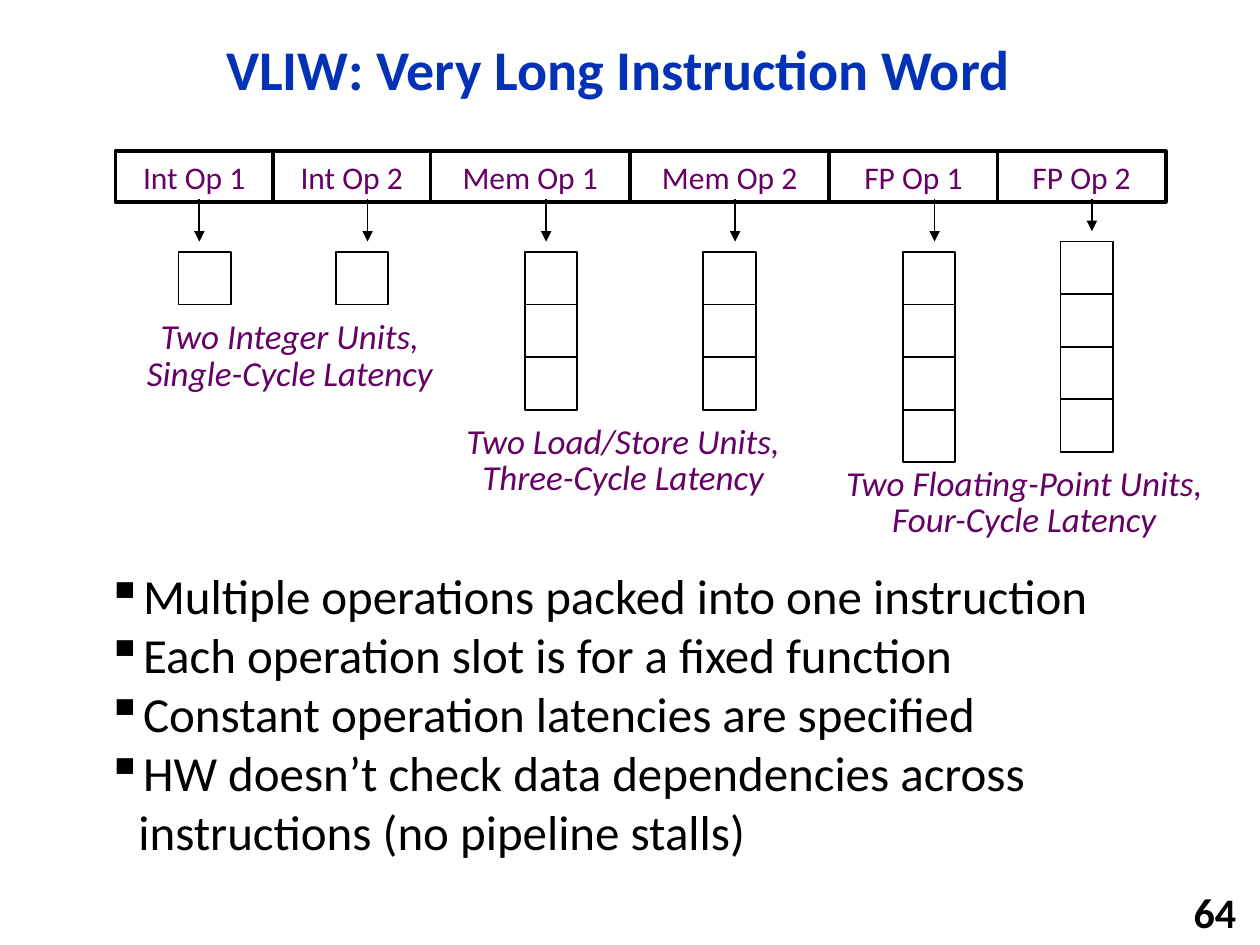
"""Build the slide on VLIW operation slots and their pipelined units."""
import dataclasses

import lxml.etree
import pptx
import pptx.dml.color
import pptx.enum.shapes
import pptx.enum.text
import pptx.oxml.ns
import pptx.util

Cm = pptx.util.Cm
Pt = pptx.util.Pt
PP_ALIGN = pptx.enum.text.PP_ALIGN
BLUE = pptx.dml.color.RGBColor(0x03, 0x32, 0xB7)
PURPLE = pptx.dml.color.RGBColor(0x66, 0x00, 0x66)
BLACK = pptx.dml.color.RGBColor(0, 0, 0)

WORD_LEFT, WORD_TOP, WORD_HEIGHT = 2.33, 3.05, 1.02
STAGE_SIZE = 1.06
ARROW_TOP, ARROW_GAP = 4.02, 0.21


@dataclasses.dataclass(frozen=True)
class Slot:
    label: str
    width: float
    arrow_x: float
    stage_left: float
    latency: int
    stage_top: float = 5.08


@dataclasses.dataclass(frozen=True)
class Caption:
    lines: tuple[str, ...]
    left: float
    top: float
    width: float


SLOTS = (
    Slot("Int Op 1", 3.17, 4.02, 3.60, 1),
    Slot("Int Op 2", 3.18, 7.41, 6.77, 1),
    Slot("Mem Op 1", 4.02, 11.01, 10.58, 3),
    Slot("Mem Op 2", 4.02, 14.82, 14.18, 3),
    Slot("FP Op 1", 3.39, 18.84, 18.20, 4),
    Slot("FP Op 2", 3.39, 22.01, 21.38, 4, 4.87),
)
CAPTIONS = (
    Caption(("Two Integer Units,", "Single-Cycle Latency"), 2.62, 6.40, 6.45),
    Caption(("Two Load/Store Units,", "Three-Cycle Latency"), 9.02, 8.51, 7.09),
    Caption(("Two Floating-Point Units,", "Four-Cycle Latency"), 16.66, 9.35, 7.98),
)
POINTS = (
    "Multiple operations packed into one instruction",
    "Each operation slot is for a fixed function",
    "Constant operation latencies are specified",
    "HW doesn’t check data dependencies across instructions (no pipeline stalls)",
)


def write(shape, *lines: str, size: float, color=BLACK, bold=False, italic=False,
          align=PP_ALIGN.CENTER, spacing=1.0, gap=0.0, wrap=True, bullet="") -> None:
    """Fill a shape with one formatted paragraph per line."""
    frame = shape.text_frame
    frame.auto_size = pptx.enum.text.MSO_AUTO_SIZE.NONE
    frame.word_wrap = wrap
    frame.vertical_anchor = pptx.enum.text.MSO_ANCHOR.MIDDLE
    frame.text = "\n".join(lines)
    for index, paragraph in enumerate(frame.paragraphs):
        paragraph.alignment = align
        paragraph.line_spacing = spacing
        paragraph.space_before = Pt(gap if index else 0)
        font = paragraph.runs[0].font
        font.name, font.size = "Calibri", Pt(size)
        font.bold, font.italic = bold, italic
        font.color.rgb = color
        if bullet:
            properties = paragraph._p.get_or_add_pPr()
            properties.set("marL", str(Cm(0.64)))
            properties.set("indent", str(Cm(-0.64)))
            mark = lxml.etree.SubElement(properties, pptx.oxml.ns.qn("a:buChar"))
            mark.set("char", bullet)


def add_text(slide, left: float, top: float, width: float, height: float,
             *lines: str, **style) -> None:
    """Add a text box."""
    box = slide.shapes.add_textbox(Cm(left), Cm(top), Cm(width), Cm(height))
    write(box, *lines, **style)


def add_box(slide, left: float, top: float, width: float, height: float, weight: float):
    """Add an outlined rectangle without fill."""
    box = slide.shapes.add_shape(pptx.enum.shapes.MSO_SHAPE.RECTANGLE,
                                 Cm(left), Cm(top), Cm(width), Cm(height))
    box.shadow.inherit = False
    box.fill.background()
    box.line.color.rgb = BLACK
    box.line.width = Pt(weight)
    return box


def add_arrow(slide, x: float, top: float, bottom: float) -> None:
    """Add a downward arrow."""
    arrow = slide.shapes.add_connector(pptx.enum.shapes.MSO_CONNECTOR.STRAIGHT,
                                       Cm(x), Cm(top), Cm(x), Cm(bottom))
    arrow.line.color.rgb = BLACK
    arrow.line.width = Pt(1)
    head = lxml.etree.SubElement(arrow.line._get_or_add_ln(), pptx.oxml.ns.qn("a:tailEnd"))
    head.set("type", "triangle")
    lxml.etree.SubElement(arrow._element.spPr, pptx.oxml.ns.qn("a:effectLst"))


def add_slot(slide, slot: Slot, left: float) -> None:
    """Draw an operation slot, its arrow and its pipeline stages."""
    for stage in range(slot.latency):
        add_box(slide, slot.stage_left, slot.stage_top + stage * STAGE_SIZE,
                STAGE_SIZE, STAGE_SIZE, 1)
    add_arrow(slide, slot.arrow_x, ARROW_TOP, slot.stage_top - ARROW_GAP)
    field = add_box(slide, left, WORD_TOP, slot.width, WORD_HEIGHT, 2.25)
    write(field, slot.label, size=18, color=PURPLE)


def main() -> None:
    """Assemble and save the slide."""
    deck = pptx.Presentation()
    deck.slide_width, deck.slide_height = Cm(25.4), Cm(19.05)
    slide = deck.slides.add_slide(deck.slide_layouts[5])

    title = slide.shapes.title
    title.left, title.top, title.width, title.height = Cm(2.33), Cm(0.43), Cm(20.27), Cm(2.06)
    write(title, "VLIW: Very Long Instruction Word", size=32, color=BLUE, bold=True, spacing=0.9)
    add_text(slide, 1.9, 11.25, 21.34, 6.25, *POINTS, size=28, align=PP_ALIGN.LEFT, bullet="▪")
    add_text(slide, 19.89, 17.98, 5.28, 0.81, "64", size=24, bold=True, align=PP_ALIGN.RIGHT)

    left = WORD_LEFT
    for slot in SLOTS:
        add_slot(slide, slot, left)
        left += slot.width
    for caption in CAPTIONS:
        add_text(slide, caption.left, caption.top, caption.width, 1.68, *caption.lines,
                 size=20, color=PURPLE, italic=True, spacing=0.7, gap=4, wrap=False)
    deck.save("out.pptx")


if __name__ == "__main__":
    main()
